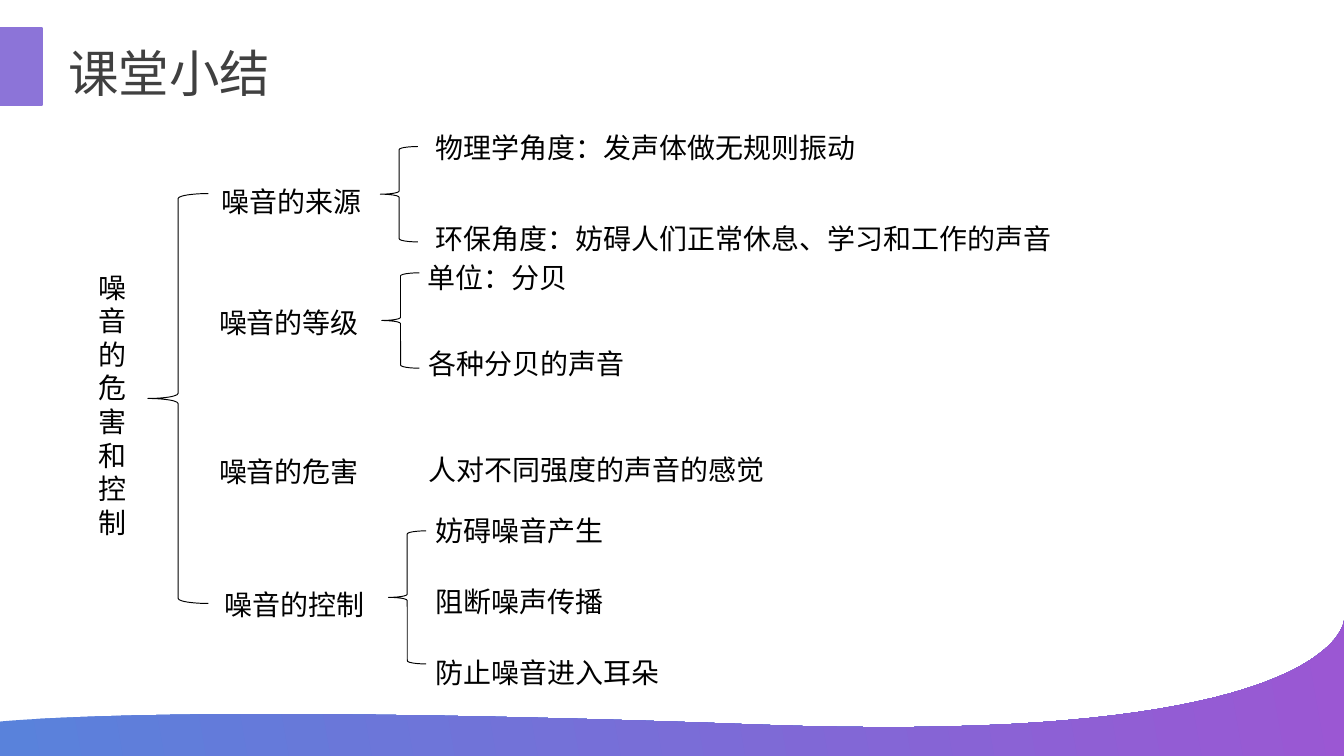
import pptx
import pptx.dml.color
import pptx.enum.shapes
import pptx.enum.text
import pptx.util

Inches = pptx.util.Inches
Align = pptx.enum.text.PP_ALIGN
Kind = pptx.enum.shapes.MSO_SHAPE

WIDTH = 10
HEIGHT = WIDTH * 9 / 16

COLORS = {
    "ink": "000000",
    "title": "404040",
    "tab": "8C74D8",
    "blue": "5982DB",
    "purple": "9B57D3",
}

TOPICS = [
    ("噪音的来源", 1.17, 1.33, Align.CENTER),
    ("噪音的等级", 1.56, 2.23, None),
    ("噪音的危害", 1.56, 3.34, None),
    ("噪音的控制", 1.6, 4.33, None),
]

POINTS = [
    ("物理学角度：发声体做无规则振动", 3.17, 0.93, 5.43),
    ("环保角度：妨碍人们正常休息、学习和工作的声音", 3.17, 1.61, 5.44),
    ("单位：分贝", 3.11, 1.9, 2),
    ("各种分贝的声音", 3.12, 2.54, 2.71),
    ("人对不同强度的声音的感觉", 3.12, 3.33, 4.25),
]

CONTROLS = [("妨碍噪音产生", 2.36), ("阻断噪声传播", 2.36), ("防止噪音进入耳朵", 2.98)]

BRACES = [
    (1.1, 1.44, 0.45, 3.05),
    (2.83, 1.09, 0.28, 0.71),
    (2.84, 2.03, 0.28, 0.71),
    (2.89, 3.95, 0.28, 0.99),
]


def rgb(name):
    """Return the named colour."""
    return pptx.dml.color.RGBColor.from_string(COLORS[name])


def curve(start, first, second, end, steps=40):
    """Return points along a cubic curve, its start left out."""
    def blend(t, axis):
        u = 1 - t
        return (u**3 * start[axis] + 3 * u * u * t * first[axis]
                + 3 * u * t * t * second[axis] + t**3 * end[axis])
    return [(blend(i / steps, 0), blend(i / steps, 1)) for i in range(1, steps + 1)]


def add_wave(slide):
    """Draw the gradient wave along the bottom edge."""
    crest, left, right = (5.6, 5.39), (-0.01, 5.37), (WIDTH, 4.62)
    edge = curve(crest, (1.25, 5.23), left, left)
    edge += [(-0.01, 5.48), (0, HEIGHT), (WIDTH, HEIGHT), right]
    edge += curve(right, right, (9.94, 5.56), crest)
    pen = slide.shapes.build_freeform(Inches(crest[0]), Inches(crest[1]))
    pen.add_line_segments([(Inches(x), Inches(y)) for x, y in edge], close=True)
    wave = pen.convert_to_shape()
    wave.shadow.inherit = False
    wave.line.fill.background()
    wave.fill.gradient()
    wave.fill.gradient_angle = 10
    for stop, name in zip(wave.fill.gradient_stops, ("blue", "purple")):
        stop.color.rgb = rgb(name)


def add_tab(slide):
    """Draw the block beside the title."""
    tab = slide.shapes.add_shape(
        Kind.RECTANGLE, 0, Inches(0.21), Inches(0.31), Inches(0.57))
    tab.shadow.inherit = False
    tab.fill.solid()
    tab.fill.fore_color.rgb = rgb("tab")
    tab.line.color.rgb = rgb("tab")
    tab.line.width = pptx.util.Pt(1)


def add_brace(slide, box):
    """Draw a thin left brace."""
    brace = slide.shapes.add_shape(Kind.LEFT_BRACE, *map(Inches, box))
    brace.shadow.inherit = False
    brace.fill.background()
    brace.line.color.rgb = rgb("ink")
    brace.line.width = pptx.util.Pt(0.5)


def add_text(slide, text, box, size=15, color="ink", align=None):
    """Write one wrapped paragraph in a text box."""
    frame = slide.shapes.add_textbox(*map(Inches, box)).text_frame
    frame.word_wrap = True
    frame.auto_size = pptx.enum.text.MSO_AUTO_SIZE.SHAPE_TO_FIT_TEXT
    frame.margin_left = frame.margin_right = Inches(0.07)
    frame.margin_top = frame.margin_bottom = Inches(0.04)
    para = frame.paragraphs[0]
    para.text = text
    para.alignment = align
    para.font.name = "Arial"
    para.font.size = pptx.util.Pt(size)
    para.font.color.rgb = rgb(color)


def main():
    """Build the summary slide."""
    deck = pptx.Presentation()
    deck.slide_width, deck.slide_height = Inches(WIDTH), Inches(HEIGHT)
    slide = deck.slides.add_slide(deck.slide_layouts[6])
    add_wave(slide)
    add_tab(slide)
    add_text(slide, "噪音的危害和控制", (0.66, 1.97, 0.51, 2.1))
    for text, x, y, align in TOPICS:
        add_text(slide, text, (x, y, 2, 0.33), align=align)
    for text, x, y, width in POINTS:
        add_text(slide, text, (x, y, width, 0.33))
    for row, (text, width) in enumerate(CONTROLS):
        add_text(slide, text, (3.17, 3.78 + row * 0.53, width, 0.33))
    for box in BRACES:
        add_brace(slide, box)
    add_text(slide, "课堂小结", (0.44, 0.27, 1.74, 0.53), 27, "title", Align.JUSTIFY)
    deck.save("out.pptx")


if __name__ == "__main__":
    main()
